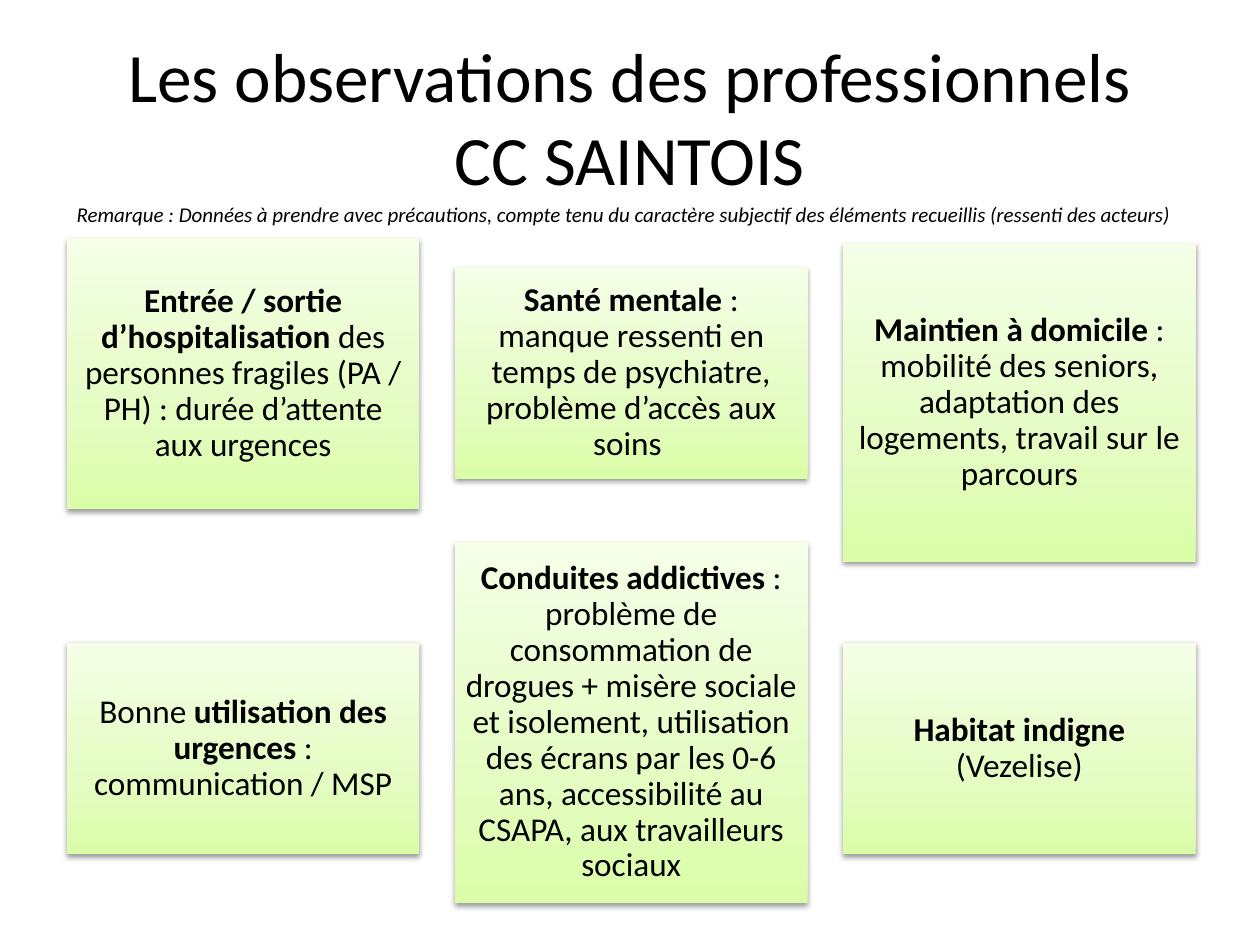
from lxml import etree
from pptx import Presentation
from pptx import util as u
from pptx.dml.color import RGBColor
from pptx.enum import shapes, text
from pptx.oxml import ns, parse_xml

FONT = "Calibri"
BLACK = "000000"
GRADIENT = [(0, "DAFDA7"), (35, "E4FCC2"), (100, "F5FFE7")]

# Card grid: equal columns, card heights follow their text
LEFT, PITCH, CARD_WIDTH = 0.53, 3.08, 2.8

# Column, top, height, then (wording, bold) spans
CARDS = [
    (0, 1.89, 2.15, [("Entrée / sortie d’hospitalisation ", True),
                     ("des personnes fragiles (PA / PH) : durée d’attente aux urgences", False)]),
    (1, 2.12, 1.68, [("Santé mentale ", True),
                     (": manque ressenti en temps de psychiatre, problème d’accès aux soins ", False)]),
    (2, 1.93, 2.53, [("Maintien à domicile ", True),
                     (": mobilité des seniors, adaptation des logements, travail sur le parcours", False)]),
    (0, 5.1, 1.68, [("Bonne ", False), ("utilisation des urgences ", True),
                    (": communication / MSP", False)]),
    (1, 4.3, 2.87, [("Conduites addictives ", True),
                    (": problème de consommation de drogues + misère sociale et isolement, "
                     "utilisation des écrans par les 0-6 ans, accessibilité au CSAPA, "
                     "aux travailleurs sociaux", False)]),
    (2, 5.1, 1.68, [("Habitat indigne ", True), ("(Vezelise)", False)]),
]


def colour(value):
    return RGBColor.from_string(value)


def inches(box):
    return [u.Inches(length) for length in box]


def style(span, size, bold=False, italic=False):
    font = span.font
    font.name, font.size = FONT, u.Pt(size)
    font.bold, font.italic = bold, italic
    font.color.rgb = colour(BLACK)


def fill_gradient(shape):
    shape.fill.gradient()
    shape.fill.gradient_angle = 90
    stops = shape.fill._fill._gradFill.find(ns.qn("a:gsLst"))
    for stop in list(stops):
        stops.remove(stop)
    for position, value in GRADIENT:
        stop = etree.SubElement(stops, ns.qn("a:gs"), pos=str(position * 1000))
        etree.SubElement(stop, ns.qn("a:srgbClr"), val=value)


def add_shadow(shape):
    shape._element.spPr.append(parse_xml(
        f'<a:effectLst {ns.nsdecls("a")}>'
        f'<a:outerShdw blurRad="{u.Pt(3.1)}" dist="{u.Pt(1.6)}" dir="5400000" rotWithShape="0">'
        f'<a:srgbClr val="{BLACK}"><a:alpha val="38000"/></a:srgbClr>'
        '</a:outerShdw></a:effectLst>'))


def add_title(page, box):
    title = page.shapes.title
    title.left, title.top, title.width, title.height = inches(box)
    frame = title.text_frame
    frame.text = "Les observations des professionnels\vCC SAINTOIS"
    frame.auto_size = text.MSO_AUTO_SIZE.NONE
    frame.vertical_anchor = text.MSO_ANCHOR.MIDDLE
    para = frame.paragraphs[0]
    para.alignment = text.PP_ALIGN.CENTER
    for span in para.runs:
        style(span, 39.6)


def add_remark(page, box):
    frame = page.shapes.add_textbox(*inches(box)).text_frame
    frame.word_wrap = True
    frame.auto_size = text.MSO_AUTO_SIZE.SHAPE_TO_FIT_TEXT
    frame.text = ("Remarque : Données à prendre avec précautions, compte tenu du caractère "
                  "subjectif des éléments recueillis (ressenti des acteurs)")
    style(frame.paragraphs[0].runs[0], 12, italic=True)


def add_card(page, box, spans):
    card = page.shapes.add_shape(shapes.MSO_SHAPE.RECTANGLE, *inches(box))
    fill_gradient(card)
    card.line.fill.background()
    add_shadow(card)
    frame = card.text_frame
    frame.word_wrap = True
    frame.vertical_anchor = text.MSO_ANCHOR.MIDDLE
    frame.margin_left = frame.margin_right = u.Inches(0.08)
    frame.margin_top = frame.margin_bottom = u.Inches(0.08)
    para = frame.paragraphs[0]
    para.alignment = text.PP_ALIGN.CENTER
    para.line_spacing = 0.9
    for wording, bold in spans:
        span = para.add_run()
        span.text = wording
        style(span, 19, bold)


def main():
    deck = Presentation()
    deck.slide_width, deck.slide_height = u.Inches(10), u.Inches(7.5)
    page = deck.slides.add_slide(deck.slide_layouts.get_by_name("Title Only"))

    # Heading
    add_title(page, (0.5, 0.3, 9, 1.25))

    # Observation cards
    for column, top, height, spans in CARDS:
        add_card(page, (LEFT + column * PITCH, top, CARD_WIDTH, height), spans)

    # Caveat under the heading
    add_remark(page, (0.51, 1.55, 9.06, 0.3))
    deck.save("out.pptx")


if __name__ == "__main__":
    main()
